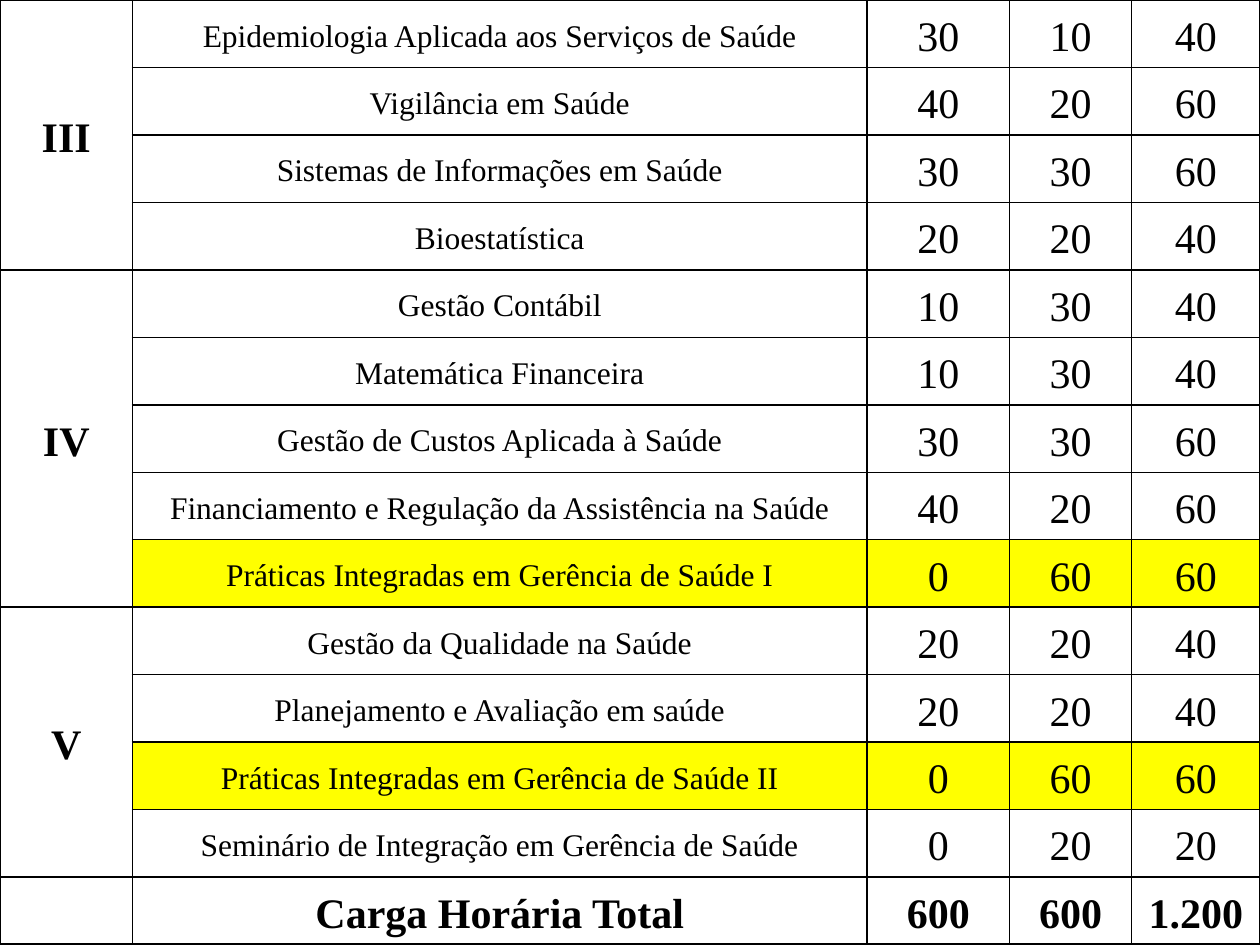
from dataclasses import dataclass

from lxml.etree import SubElement
from pptx import Presentation
from pptx.dml.color import RGBColor
from pptx.enum.text import MSO_ANCHOR, PP_ALIGN
from pptx.oxml.ns import qn
from pptx.util import Cm, Pt

SEMESTERS = [
    ("III", [
        ("Epidemiologia Aplicada aos Serviços de Saúde", "30", "10", "40"),
        ("Vigilância em Saúde", "40", "20", "60"),
        ("Sistemas de Informações em Saúde", "30", "30", "60"),
        ("Bioestatística", "20", "20", "40"),
    ]),
    ("IV", [
        ("Gestão Contábil", "10", "30", "40"),
        ("Matemática Financeira", "10", "30", "40"),
        ("Gestão de Custos Aplicada à Saúde", "30", "30", "60"),
        ("Financiamento e Regulação da Assistência na Saúde", "40", "20", "60"),
        ("Práticas Integradas em Gerência de Saúde I", "0", "60", "60"),
    ]),
    ("V", [
        ("Gestão da Qualidade na Saúde", "20", "20", "40"),
        ("Planejamento e Avaliação em saúde", "20", "20", "40"),
        ("Práticas Integradas em Gerência de Saúde II", "0", "60", "60"),
        ("Seminário de Integração em Gerência de Saúde", "0", "20", "20"),
    ]),
    ("", [("Carga Horária Total", "600", "600", "1.200")]),
]
HIGHLIGHTED = "Práticas Integradas"
COLUMN_WIDTHS = (2.67, 14.81, 2.87, 2.46, 2.59)
SLIDE_WIDTH, SLIDE_HEIGHT = Cm(25.4), Cm(19.05)


@dataclass(frozen=True)
class Theme:
    font: str = "Times New Roman"
    ink: str = "000000"
    highlight: str = "FFFF00"
    subject_size: int = 18
    main_size: int = 24
    line_spacing: float = 1.15
    thin: float = 1
    thick: float = 1.5


THEME = Theme()


def draw_borders(cell, top, bottom):
    properties = cell._tc.get_or_add_tcPr()
    widths = {"L": THEME.thin, "R": THEME.thin, "T": top, "B": bottom}
    for side, width in widths.items():
        border = SubElement(properties, qn(f"a:ln{side}"), w=str(Pt(width)))
        paint = SubElement(border, qn("a:solidFill"))
        SubElement(paint, qn("a:srgbClr"), val=THEME.ink)


def format_cell(cell, top, bottom, highlighted=False):
    draw_borders(cell, top, bottom)
    if highlighted:
        cell.fill.solid()
        cell.fill.fore_color.rgb = RGBColor.from_string(THEME.highlight)
    else:
        cell.fill.background()
    cell.vertical_anchor = MSO_ANCHOR.MIDDLE
    cell.margin_left = cell.margin_right = Cm(0.1)
    cell.margin_top = cell.margin_bottom = 0


def write(cell, wording, size, bold):
    paragraph = cell.text_frame.paragraphs[0]
    paragraph.alignment = PP_ALIGN.CENTER
    paragraph.line_spacing = THEME.line_spacing
    if wording:
        run = paragraph.add_run()
        run.text = wording
        run.font.name = THEME.font
        run.font.size = Pt(size)
        run.font.bold = bold
        run.font.color.rgb = RGBColor.from_string(THEME.ink)


def fill_semester(curriculum, first, semester, subjects):
    last = first + len(subjects) - 1
    is_total = not semester
    for row, subject in enumerate(subjects, first):
        top = THEME.thick if row == first else THEME.thin
        bottom = THEME.thick if row == last else THEME.thin
        format_cell(curriculum.cell(row, 0), THEME.thick, THEME.thick)
        for column, wording in enumerate(subject, 1):
            cell = curriculum.cell(row, column)
            format_cell(cell, top, bottom, subject[0].startswith(HIGHLIGHTED))
            small = column == 1 and not is_total
            write(cell, wording, THEME.subject_size if small else THEME.main_size, is_total)
    heading = curriculum.cell(first, 0)
    if last > first:
        heading.merge(curriculum.cell(last, 0))
    write(heading, semester, THEME.main_size, True)
    return last + 1


def main():
    """Build the course workload table by semester."""
    presentation = Presentation()
    presentation.slide_width, presentation.slide_height = SLIDE_WIDTH, SLIDE_HEIGHT
    slide = presentation.slides.add_slide(presentation.slide_layouts[6])
    row_count = sum(len(subjects) for _, subjects in SEMESTERS)
    curriculum = slide.shapes.add_table(
        row_count, len(COLUMN_WIDTHS), 0, 0, SLIDE_WIDTH, SLIDE_HEIGHT
    ).table
    curriculum.first_row = curriculum.horz_banding = False
    for column, width in zip(curriculum.columns, COLUMN_WIDTHS):
        column.width = Cm(width)
    next_row = 0
    for semester, subjects in SEMESTERS:
        next_row = fill_semester(curriculum, next_row, semester, subjects)
    presentation.save("out.pptx")


if __name__ == "__main__":
    main()
